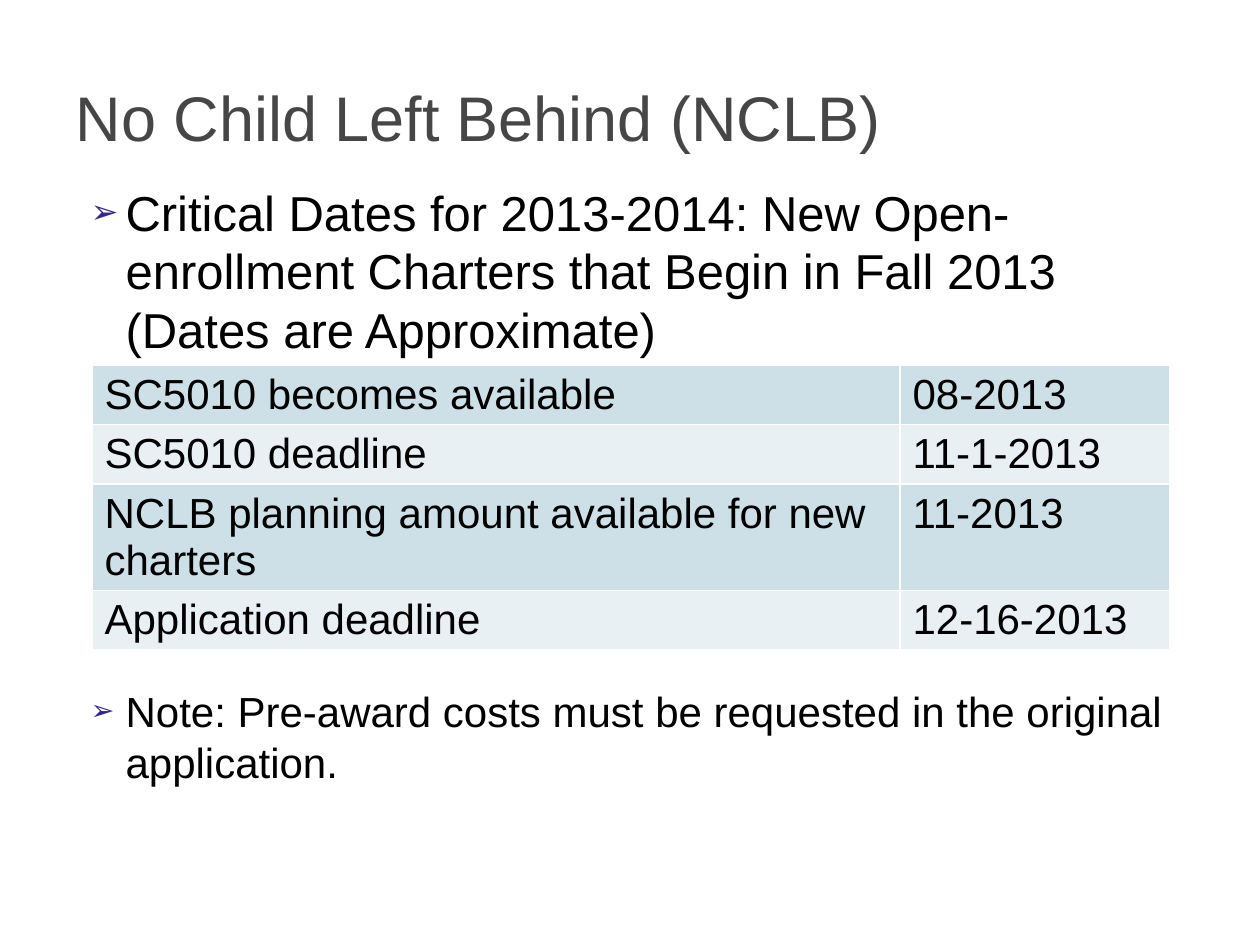
from lxml import etree
from pptx import Presentation
from pptx import util as u
from pptx.dml.color import RGBColor
from pptx.enum import text as t
from pptx.oxml import ns

TITLE = "No Child Left Behind (NCLB)"
BULLETS = [
    ("Critical Dates for 2013-2014: New Open-enrollment Charters that Begin in Fall 2013 "
     "(Dates are Approximate)", 28, 0),
    ("Note: Pre-award costs must be requested in the original application.", 24, 187),
]
DATES = [
    ("SC5010 becomes available", "08-2013"),
    ("SC5010 deadline", "11-1-2013"),
    ("NCLB planning amount available for new charters", "11-2013"),
    ("Application deadline", "12-16-2013"),
]
COLUMN_WIDTHS = [808, 270]
ROW_HEIGHTS = [59, 59, 106, 59]
BANDS = ["CDE0E8", "E8F0F4"]
FONT = "Arial"


def px(length):
    return u.Emu(round(length * 914400 / 126))


def color(value):
    return RGBColor.from_string(value)


def place(box, left, top, width, height):
    box.left, box.top, box.width, box.height = map(px, (left, top, width, height))


def add_element(parent, tag, **attributes):
    return etree.SubElement(parent, ns.qn(tag), attributes)


def write(para, words, size=24, ink="000000", before=0):
    para.alignment = t.PP_ALIGN.LEFT
    para.space_before = u.Pt(before)
    para.line_spacing = 1.0
    span = para.add_run()
    span.text = words
    span.font.name = FONT
    span.font.size = u.Pt(size)
    span.font.color.rgb = color(ink)


def add_bullet(para):
    properties = para._p.get_or_add_pPr()
    properties.set("marL", str(px(50)))
    properties.set("indent", str(px(-35)))
    tint = add_element(properties, "a:buClr")
    add_element(tint, "a:srgbClr", val="34278D")
    add_element(properties, "a:buSzPct", val="68000")
    add_element(properties, "a:buFont", typeface=FONT)
    add_element(properties, "a:buChar", char="➢")


def add_borders(cell):
    properties = cell._tc.get_or_add_tcPr()
    for position, side in enumerate(("a:lnL", "a:lnR", "a:lnT", "a:lnB")):
        line = etree.Element(ns.qn(side), w=str(u.Pt(1)))
        fill = add_element(line, "a:solidFill")
        add_element(fill, "a:srgbClr", val="FFFFFF")
        properties.insert(position, line)


def add_dates(page):
    frame = page.shapes.add_table(len(DATES), len(COLUMN_WIDTHS), px(92), px(365),
                                  px(sum(COLUMN_WIDTHS)), px(sum(ROW_HEIGHTS)))
    table = frame.table
    table.first_row = False
    for column, width in zip(table.columns, COLUMN_WIDTHS):
        column.width = px(width)
    for index, (row, entries) in enumerate(zip(table.rows, DATES)):
        row.height = px(ROW_HEIGHTS[index])
        for cell, words in zip(row.cells, entries):
            cell.fill.solid()
            cell.fill.fore_color.rgb = color(BANDS[index % 2])
            add_borders(cell)
            write(cell.text_frame.paragraphs[0], words)


def main():
    deck = Presentation()
    deck.slide_width, deck.slide_height = px(1260), px(945)
    page = deck.slides.add_slide(deck.slide_layouts[1])

    title = page.shapes.title
    place(title, 63, 37, 1134, 158)
    title.text_frame.vertical_anchor = t.MSO_ANCHOR.MIDDLE
    title.text_frame.auto_size = t.MSO_AUTO_SIZE.NONE
    write(title.text_frame.paragraphs[0], TITLE, size=36, ink="464646")

    body = page.placeholders[1]
    place(body, 63, 175, 1134, 653)
    frame = body.text_frame
    frame.auto_size = t.MSO_AUTO_SIZE.NONE
    frame.margin_top = px(7)
    for index, (words, size, before) in enumerate(BULLETS):
        para = frame.add_paragraph() if index else frame.paragraphs[0]
        add_bullet(para)
        write(para, words, size=size, before=before)

    add_dates(page)
    deck.save("out.pptx")


if __name__ == "__main__":
    main()
